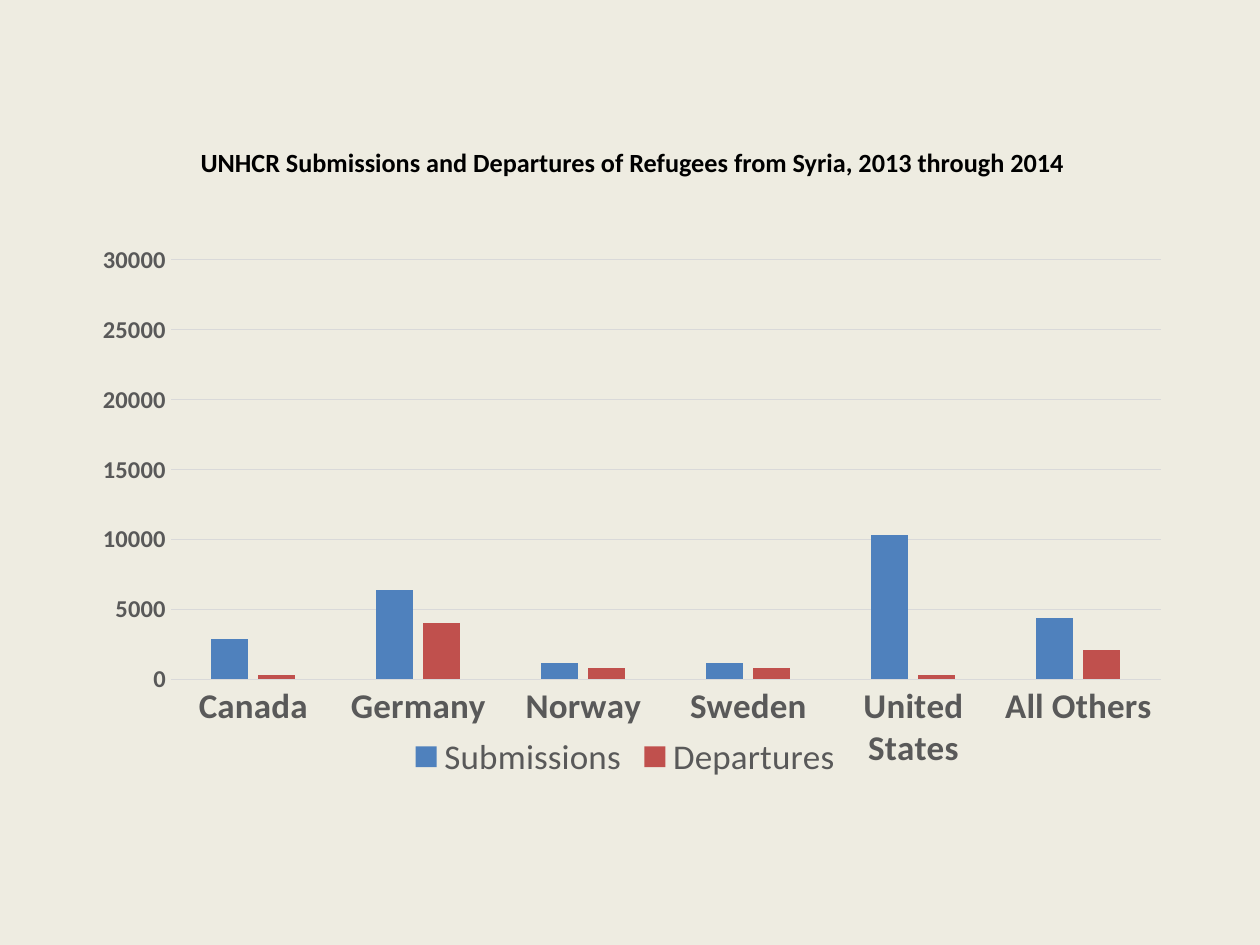
import pptx
import pptx.chart.data
import pptx.dml.color
import pptx.enum.chart
import pptx.enum.text
import pptx.oxml
import pptx.oxml.ns
import pptx.util

WIDTH, HEIGHT = 10, 7.5
FONT = "Calibri"
GREY, GRID, BLACK = "595959", "D9D9D9", "000000"
COUNTRIES = ["Canada", "Germany", "Norway", "Sweden", "United States", "All Others"]
SERIES = [
    ("Submissions", "4F81BD", [2900, 6400, 1200, 1200, 10300, 4400]),
    ("Departures", "C0504D", [300, 4000, 800, 800, 300, 2100]),
]


def rgb(hex_string):
    """Return the colour for a hex string."""
    return pptx.dml.color.RGBColor.from_string(hex_string)


def box(left, top, width, height):
    """Turn shares of the slide's size into lengths."""
    return [
        pptx.util.Inches(share * size)
        for share, size in zip((left, top, width, height), (WIDTH, HEIGHT) * 2)
    ]


def set_font(font, size, color, bold=False):
    """Format a font."""
    font.name = FONT
    font.size = pptx.util.Pt(size)
    font.bold = bold
    font.color.rgb = rgb(color)


def set_line(line, color):
    """Format a thin chart line."""
    line.color.rgb = rgb(color)
    line.width = pptx.util.Pt(0.75)


def add_title(s, text, place):
    """Place and format the slide title."""
    sp = s.shapes.title
    sp.left, sp.top, sp.width, sp.height = place
    tf = sp.text_frame
    tf.text = text
    tf.word_wrap = True
    tf.auto_size = pptx.enum.text.MSO_AUTO_SIZE.NONE
    tf.vertical_anchor = pptx.enum.text.MSO_ANCHOR.TOP
    p = tf.paragraphs[0]
    p.alignment = pptx.enum.text.PP_ALIGN.CENTER
    set_font(p.runs[0].font, 15, BLACK, True)


def set_plot_area(chart, x, y, w, h):
    """Fix the inner plot area as shares of the chart's size."""
    plot_area = chart._chartSpace.chart.plotArea
    for old in plot_area.findall(pptx.oxml.ns.qn("c:layout")):
        plot_area.remove(old)
    sizes = "".join(
        f'<c:{tag} val="{value}"/>' for tag, value in zip("xywh", (x, y, w, h))
    )
    plot_area.insert(0, pptx.oxml.parse_xml(
        f'<c:layout {pptx.oxml.ns.nsdecls("c")}><c:manualLayout>'
        '<c:layoutTarget val="inner"/><c:xMode val="edge"/><c:yMode val="edge"/>'
        f'{sizes}</c:manualLayout></c:layout>'
    ))


def format_axes(chart):
    """Format the country and value axes."""
    for axis, size in ((chart.category_axis, 20), (chart.value_axis, 14)):
        axis.major_tick_mark = pptx.enum.chart.XL_TICK_MARK.NONE
        axis.minor_tick_mark = pptx.enum.chart.XL_TICK_MARK.NONE
        set_font(axis.tick_labels.font, size, GREY, True)
    set_line(chart.category_axis.format.line, GRID)
    axis = chart.value_axis
    axis.minimum_scale, axis.maximum_scale, axis.major_unit = 0, 30000, 5000
    axis.format.line.fill.background()
    axis.has_major_gridlines = True
    set_line(axis.major_gridlines.format.line, GRID)


def add_column_chart(s, place):
    """Add the clustered columns with a legend below."""
    data = pptx.chart.data.CategoryChartData()
    data.categories = COUNTRIES
    for name, _, values in SERIES:
        data.add_series(name, values)
    kind = pptx.enum.chart.XL_CHART_TYPE.COLUMN_CLUSTERED
    chart = s.shapes.add_chart(kind, *place, data).chart
    chart.has_title = False
    set_font(chart.font, 10, BLACK)
    plot = chart.plots[0]
    plot.gap_width, plot.overlap = 219, -27
    plot.vary_by_categories = False
    for series, (_, color, _) in zip(plot.series, SERIES):
        series.format.fill.solid()
        series.format.fill.fore_color.rgb = rgb(color)
    format_axes(chart)
    set_plot_area(chart, 0.076, 0.016, 0.924, 0.786)
    chart.has_legend = True
    chart.legend.position = pptx.enum.chart.XL_LEGEND_POSITION.BOTTOM
    chart.legend.include_in_layout = False
    set_font(chart.legend.font, 20, GREY)


def main():
    """Build the slide and save it."""
    prs = pptx.Presentation()
    prs.slide_width = pptx.util.Inches(WIDTH)
    prs.slide_height = pptx.util.Inches(HEIGHT)
    s = prs.slides.add_slide(prs.slide_layouts.get_by_name("Title Only"))
    s.background.fill.solid()
    s.background.fill.fore_color.rgb = rgb("EEECE1")
    add_column_chart(s, box(0.071, 0.259, 0.851, 0.572))
    add_title(
        s,
        "UNHCR Submissions and Departures of Refugees from Syria, 2013 through 2014",
        box(0.082, 0.148, 0.84, 0.047),
    )
    prs.save("out.pptx")


if __name__ == "__main__":
    main()
